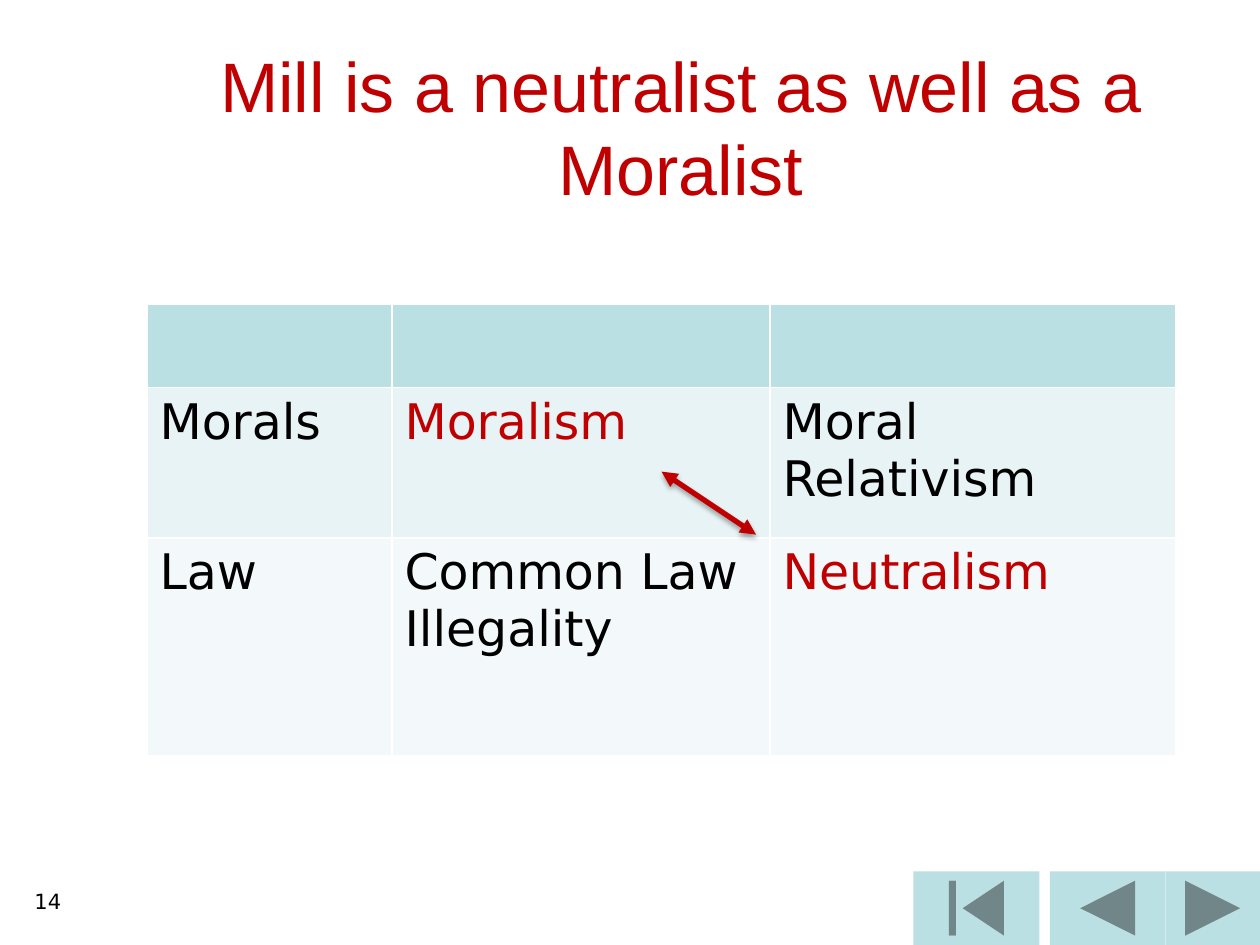
from lxml import etree
from pptx import Presentation
from pptx.dml.color import RGBColor
from pptx.enum import shapes, text
from pptx.oxml import ns
from pptx.util import Pt

RED = RGBColor(0xC0, 0x00, 0x00)
BLACK = RGBColor(0x00, 0x00, 0x00)
TEAL = RGBColor(0xBB, 0xE0, 0xE3)
ROW_FILLS = [TEAL, RGBColor(0xE7, 0xF3, 0xF4), RGBColor(0xF3, 0xF9, 0xFA)]


def write(frame, words, **font_format):
    paragraph = frame.paragraphs[0]
    run = paragraph.add_run()
    run.text = words
    run.font.color.rgb = font_format.pop("color")
    for attribute, value in font_format.items():
        setattr(run.font, attribute, value)
    return paragraph


def add_xml(parent, tag, **attributes):
    return etree.SubElement(parent, ns.qn(tag), attributes)


prs = Presentation()
prs.slide_width, prs.slide_height = Pt(720), Pt(540)
slide = prs.slides.add_slide(prs.slide_layouts[5])

# Navigation buttons along the bottom edge
buttons = [
    (shapes.MSO_SHAPE.ACTION_BUTTON_BACK_OR_PREVIOUS, 600, 66),
    (shapes.MSO_SHAPE.ACTION_BUTTON_BEGINNING, 522, 72),
    (shapes.MSO_SHAPE.ACTION_BUTTON_FORWARD_OR_NEXT, 666, 54),
]
for kind, left, width in buttons:
    button = slide.shapes.add_shape(kind, Pt(left), Pt(498), Pt(width), Pt(42))
    button.shadow.inherit = False
    button.fill.solid()
    button.fill.fore_color.rgb = TEAL
    button.line.fill.background()

# Title
heading = slide.shapes.title
title_box = {"left": 45.5, "top": 24, "width": 687, "height": 96}
for attribute, value in title_box.items():
    setattr(heading, attribute, Pt(value))
heading.text_frame.vertical_anchor = text.MSO_ANCHOR.MIDDLE
write(heading.text_frame, "Mill is a neutralist as well as a Moralist",
      size=Pt(40), name="Arial", color=RED).alignment = text.PP_ALIGN.CENTER

# Slide number
number = slide.shapes.add_textbox(Pt(-108), Pt(504), Pt(150), Pt(36)).text_frame
number.word_wrap = True
write(number, "14", size=Pt(12), name="DejaVu Sans",
      color=BLACK).alignment = text.PP_ALIGN.RIGHT

# Table of positions on morals and law
positions = [
    ["", "", ""],
    ["Morals", "Moralism", "Moral Relativism"],
    ["Law", "Common Law Illegality", "Neutralism"],
]
mill_views = {"Moralism", "Neutralism"}
grid = slide.shapes.add_table(3, 3, Pt(84), Pt(174), Pt(588), Pt(258)).table
grid.horz_banding = False
for column, width in zip(grid.columns, [140, 216, 232]):
    column.width = Pt(width)
for row, height, fill, entries in zip(grid.rows, [47.5, 86, 124.5], ROW_FILLS, positions):
    row.height = Pt(height)
    for cell, entry in zip(row.cells, entries):
        cell.fill.solid()
        cell.fill.fore_color.rgb = fill
        if entry:
            write(cell.text_frame, entry, size=Pt(28), name="DejaVu Sans",
                  color=RED if entry in mill_views else BLACK)

# Double arrow between Mill's two views
link = slide.shapes.add_connector(
    shapes.MSO_CONNECTOR.STRAIGHT, Pt(378), Pt(269.5), Pt(432), Pt(305.5))
link.line.color.rgb = RED
link.line.width = Pt(3)
outline = link.line._get_or_add_ln()
for end in ("a:headEnd", "a:tailEnd"):
    add_xml(outline, end, type="triangle")
effects = add_xml(link._element.spPr, "a:effectLst")
shadow = add_xml(effects, "a:outerShdw", blurRad=str(Pt(3.1)), dist=str(Pt(1.8)),
                 dir="5400000", rotWithShape="0")
shade = add_xml(shadow, "a:srgbClr", val=str(BLACK))
add_xml(shade, "a:alpha", val="35000")

prs.save("out.pptx")
